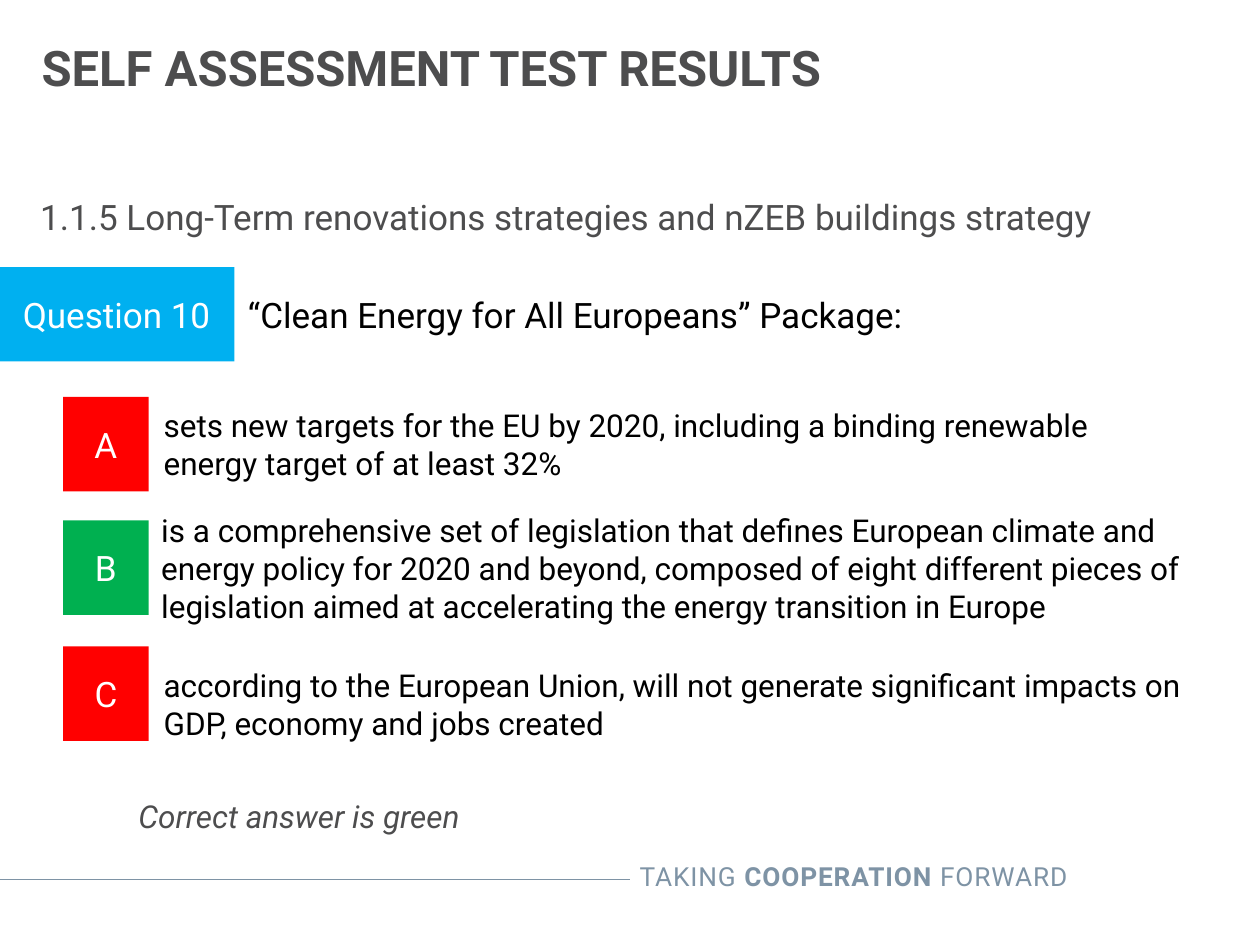
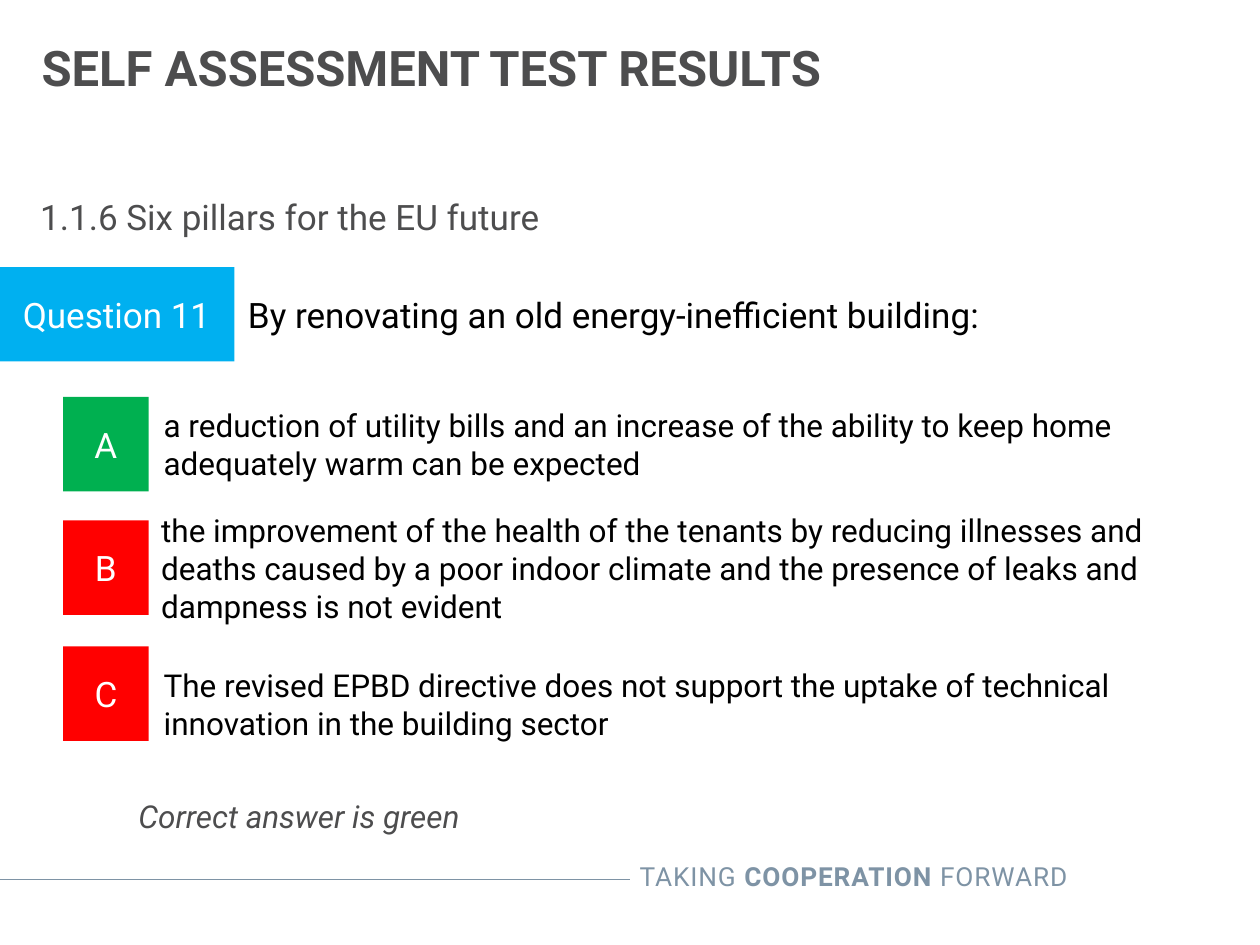
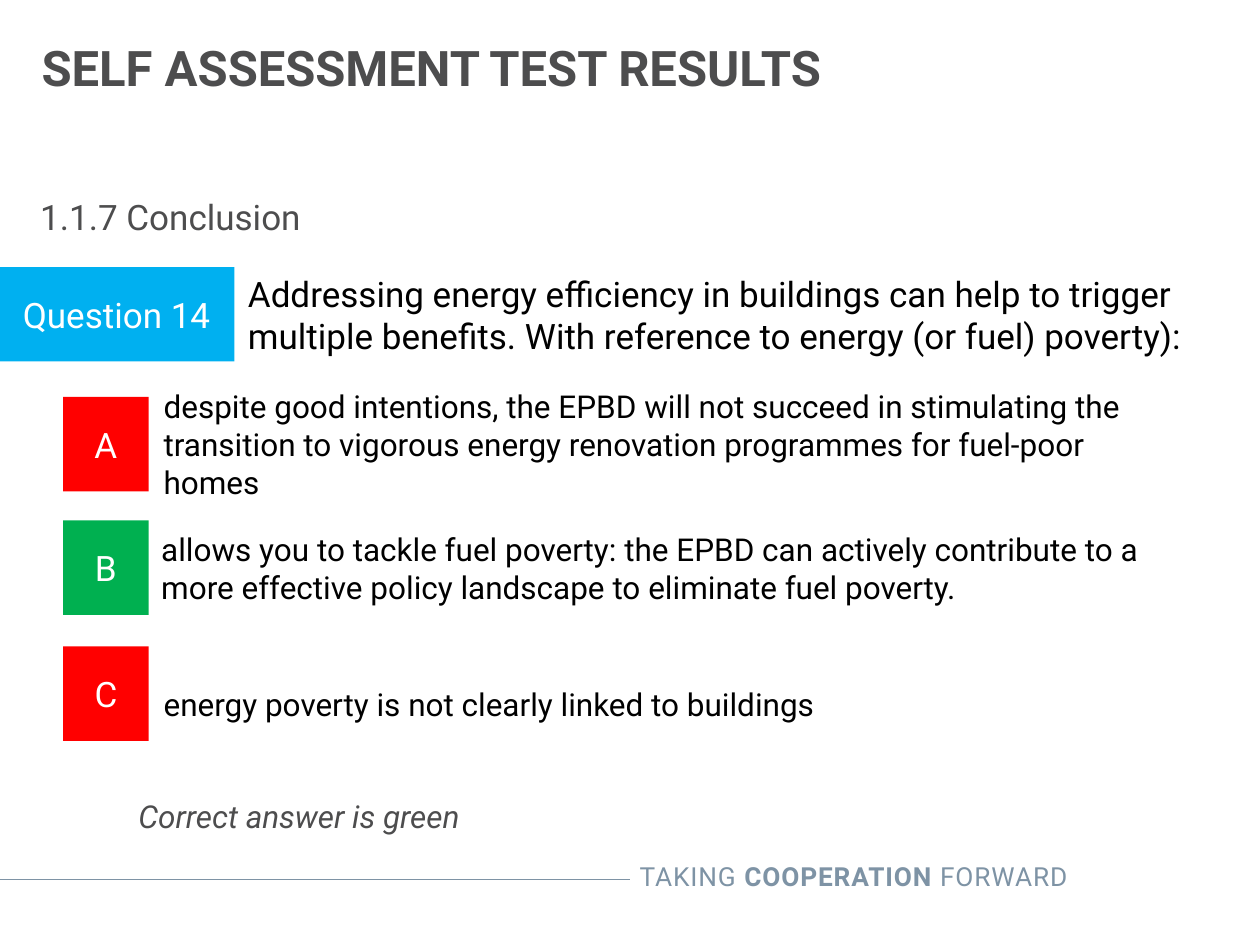
from lxml import etree
from pptx import Presentation
from pptx import util as u
from pptx.dml.color import RGBColor
from pptx.enum import shapes, text
from pptx.oxml.ns import qn

Pt = u.Pt
INK = {"grey": "4D4D4E", "slate": "7E93A5", "blue": "00B0F0", "red": "FF0000",
       "green": "00B050", "white": "FFFFFF", "black": "000000"}
LEFT, MID = text.PP_ALIGN.LEFT, text.PP_ALIGN.CENTER
ROWS = [
    ("A", 226.8, (86.4, 226.8, 586.8, 54)),
    ("B", 297.4, (85, 297.4, 612.7, 54)),
    ("C", 369.4, (86.4, 375.1, 611.3, 54)),
]
TESTS = [
    ("1.1.5 Long-Term renovations strategies and nZEB buildings strategy",
     "Question 10", "“Clean Energy for All Europeans” Package:", "B",
     ["sets new targets for the EU by 2020, including a binding renewable energy target of at least 32%",
      "is a comprehensive set of legislation that defines European climate and energy policy for 2020 and "
      "beyond, composed of eight different pieces of legislation aimed at accelerating the energy "
      "transition in Europe",
      "according to the European Union, will not generate significant impacts on GDP, economy and jobs created"]),
    ("1.1.6 Six pillars for the EU future",
     "Question 11", "By renovating an old energy-inefficient building:", "A",
     ["a reduction of utility bills and an increase of the ability to keep home adequately warm can be expected",
      "the improvement of the health of the tenants by reducing illnesses and deaths caused by a poor indoor "
      "climate and the presence of leaks and dampness is not evident",
      "The revised EPBD directive does not support the uptake of technical innovation in the building sector"]),
    ("1.1.7 Conclusion",
     "Question 14", "Addressing energy efficiency in buildings can help to trigger multiple benefits. "
     "With reference to energy (or fuel) poverty):", "B",
     ["despite good intentions, the EPBD will not succeed in stimulating the transition to vigorous energy "
      "renovation programmes for fuel-poor homes",
      "allows you to tackle fuel poverty: the EPBD can actively contribute to a more effective policy "
      "landscape to eliminate fuel poverty.",
      "energy poverty is not clearly linked to buildings"]),
]


class Deck:
    """Holds the deck style and the current slide."""

    def __init__(self):
        self.prs = Presentation()
        self.prs.slide_width, self.prs.slide_height = Pt(720), Pt(540)

    def start(self):
        self.page = self.prs.slides.add_slide(self.prs.slide_layouts[1])

    def place(self, shape, box):
        for name, size in zip(("left", "top", "width", "height"), box):
            setattr(shape, name, Pt(size))

    def frame(self, shape, **more):
        form = {"word_wrap": True, "auto_size": text.MSO_AUTO_SIZE.NONE,
                "vertical_anchor": text.MSO_ANCHOR.MIDDLE, **more}
        for name, value in form.items():
            setattr(shape.text_frame, name, value)
        return shape.text_frame

    def style(self, para, words, ink, size, align=LEFT, before=0, **more):
        form = {"alignment": align, "space_before": Pt(before), "space_after": Pt(0)}
        for name, value in form.items():
            setattr(para, name, value)
        run = para.add_run()
        run.text = words
        for name, value in {"name": "Roboto", "size": Pt(size), "bold": False, **more}.items():
            setattr(run.font, name, value)
        run.font.color.rgb = RGBColor.from_string(INK[ink])
        return run

    def indent(self, para, left):
        props = para._p.get_or_add_pPr()
        props.set("marL", str(Pt(left)))
        props.set("indent", "0")
        etree.SubElement(props, qn("a:buNone"))

    def title(self, words):
        shape = self.page.shapes.title
        self.place(shape, (-0.7, 11.5, 518.4, 54))
        para = self.frame(shape).paragraphs[0]
        self.indent(para, 17.3)
        self.style(para, words, "grey", 28, bold=True)

    def body(self, head, note):
        shape = self.page.placeholders[1]
        self.place(shape, (23, 111.5, 674, 24.5))
        edges = dict.fromkeys(("margin_left", "margin_top", "margin_right", "margin_bottom"), 0)
        frame = self.frame(shape, vertical_anchor=text.MSO_ANCHOR.TOP, **edges)
        first, last = frame.paragraphs[0], frame.add_paragraph()
        self.indent(first, 0)
        self.style(first, head, "grey", 20)
        self.indent(last, 56)
        self.style(last, note, "grey", 18, before=320, italic=True)

    def label(self, words, box, size):
        shape = self.page.shapes.add_textbox(*map(Pt, box))
        self.style(self.frame(shape).paragraphs[0], words, "black", size)

    def block(self, words, box, fill):
        shape = self.page.shapes.add_shape(shapes.MSO_SHAPE.RECTANGLE, *map(Pt, box))
        shape.shadow.inherit = False
        shape.fill.solid()
        shape.fill.fore_color.rgb = RGBColor.from_string(INK[fill])
        shape.line.fill.background()
        self.style(self.frame(shape).paragraphs[0], words, "white", 20, MID)

    def footer(self):
        rule = self.page.shapes.add_connector(
            shapes.MSO_CONNECTOR.STRAIGHT, *map(Pt, (-0.7, 502.6, 360, 502.6)))
        rule.line.width = Pt(0.75)
        rule.line.color.rgb = RGBColor.from_string(INK["slate"])
        etree.SubElement(rule._element.spPr, qn("a:effectLst"))
        shape = self.page.shapes.add_textbox(*map(Pt, (279.4, 488.2, 337.7, 25.2)))
        para = self.frame(shape, vertical_anchor=text.MSO_ANCHOR.TOP).paragraphs[0]
        for words, bold in (("TAKING ", False), ("COOPERATION", True), (" FORWARD", False)):
            run = self.style(para, words, "slate", 15, text.PP_ALIGN.RIGHT, bold=bold)
            run.font._element.set("spc", "50")


def main():
    deck = Deck()
    for head, tag, ask, right, answers in TESTS:
        deck.start()
        deck.footer()
        deck.title("SELF ASSESSMENT TEST RESULTS")
        deck.body(head, "Correct answer is green")
        deck.block(tag, (-0.7, 152.6, 134.7, 54), "blue")
        deck.label(ask, (134.6, 152.6, 586.8, 54), 20)
        for (key, top, box), answer in zip(ROWS, answers):
            deck.block(key, (36, top, 49, 54), "green" if key == right else "red")
            deck.label(answer, box, 18)
    deck.prs.save("out.pptx")


if __name__ == "__main__":
    main()
